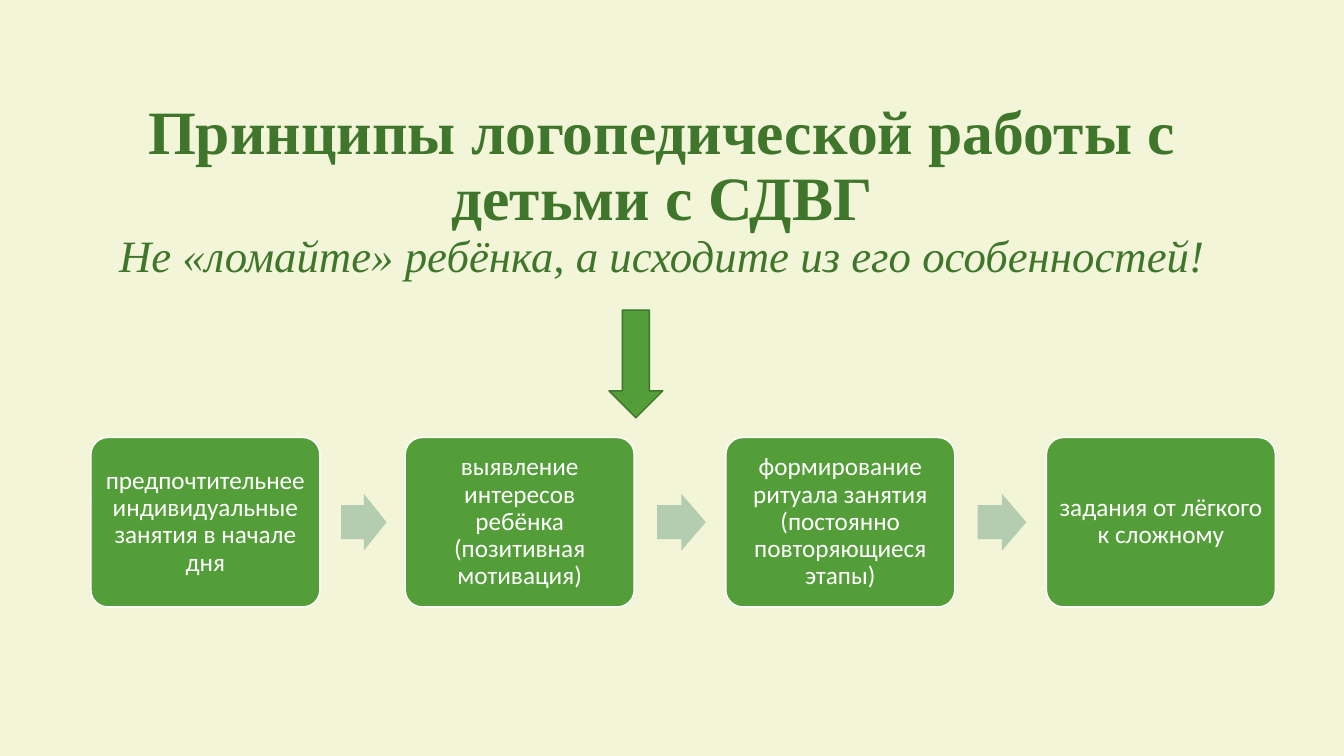
from pptx import Presentation
from pptx.dml.color import RGBColor
from pptx.enum.shapes import MSO_SHAPE
from pptx.enum.text import MSO_ANCHOR, PP_ALIGN
from pptx.util import Pt

HUES = {
    "back": "F2F5D8",
    "title": "3F762B",
    "box": "549E39",
    "edge": "3E752A",
    "arrow": "B4CCAF",
    "white": "FFFFFF",
}
STEPS = [
    (65, "предпочтительнее индивидуальные занятия в начале дня"),
    (289.5, "выявление интересов ребёнка (позитивная мотивация)"),
    (518.5, "формирование ритуала занятия (постоянно повторяющиеся этапы)"),
    (747.5, "задания от лёгкого к сложному"),
]


def hue(name):
    return RGBColor.from_string(HUES[name])


def add_form(slide, kind, box, fill, line=None, adjust=()):
    """Add a flat preset shape; box is left, top, width, height in points."""
    form = slide.shapes.add_shape(kind, *map(Pt, box))
    form.shadow.inherit = False
    form.fill.solid()
    form.fill.fore_color.rgb = hue(fill)
    if line:
        form.line.color.rgb = hue(line)
        form.line.width = Pt(1)
    else:
        form.line.fill.background()
    for index, value in enumerate(adjust):
        form.adjustments[index] = value
    return form


def style(para, font, size, color, bold=False, italic=False):
    para.alignment = PP_ALIGN.CENTER
    para.line_spacing = 0.9
    for run in para.runs:
        run.font.name = font
        run.font.size = Pt(size)
        run.font.bold = bold
        run.font.italic = italic
        run.font.color.rgb = hue(color)


def add_title(slide, box):
    frame = slide.shapes.add_textbox(*map(Pt, box)).text_frame
    frame.word_wrap = True
    frame.vertical_anchor = MSO_ANCHOR.MIDDLE
    frame.text = ("Принципы логопедической работы с детьми с СДВГ\n"
                  "Не «ломайте» ребёнка, а исходите из его особенностей!")
    head, motto = frame.paragraphs
    style(head, "Times New Roman", 44, "title", bold=True)
    style(motto, "Times New Roman", 32, "title", italic=True)


def add_step(slide, box, text):
    form = add_form(slide, MSO_SHAPE.ROUNDED_RECTANGLE, box, "box", "white", [0.1])
    frame = form.text_frame
    frame.word_wrap = True
    frame.vertical_anchor = MSO_ANCHOR.MIDDLE
    frame.margin_left = frame.margin_right = Pt(5)
    frame.margin_top = frame.margin_bottom = Pt(5)
    frame.text = text
    style(frame.paragraphs[0], "Calibri", 18, "white")


def add_chain(slide, top, width, height):
    """Draw the steps in a row with an arrow in each gap."""
    for left, text in STEPS:
        add_step(slide, (left, top, width, height), text)
    tall = 40.5
    for (left, _), (after, _) in zip(STEPS, STEPS[1:]):
        end = left + width
        gap = after - end
        box = (end + gap * 0.25, top + (height - tall) / 2, gap * 0.53, tall)
        add_form(slide, MSO_SHAPE.RIGHT_ARROW, box, "arrow", adjust=[0.6, 0.5])


def main():
    deck = Presentation()
    deck.slide_width, deck.slide_height = Pt(960), Pt(540)
    slide = deck.slides.add_slide(deck.slide_layouts[6])
    slide.background.fill.solid()
    slide.background.fill.fore_color.rgb = hue("back")
    add_title(slide, (52, 29, 842, 216))
    add_chain(slide, 312.5, 163.5, 121)
    add_form(slide, MSO_SHAPE.DOWN_ARROW, (435, 221.5, 38.5, 77), "box", "edge")
    deck.save("out.pptx")


if __name__ == "__main__":
    main()
